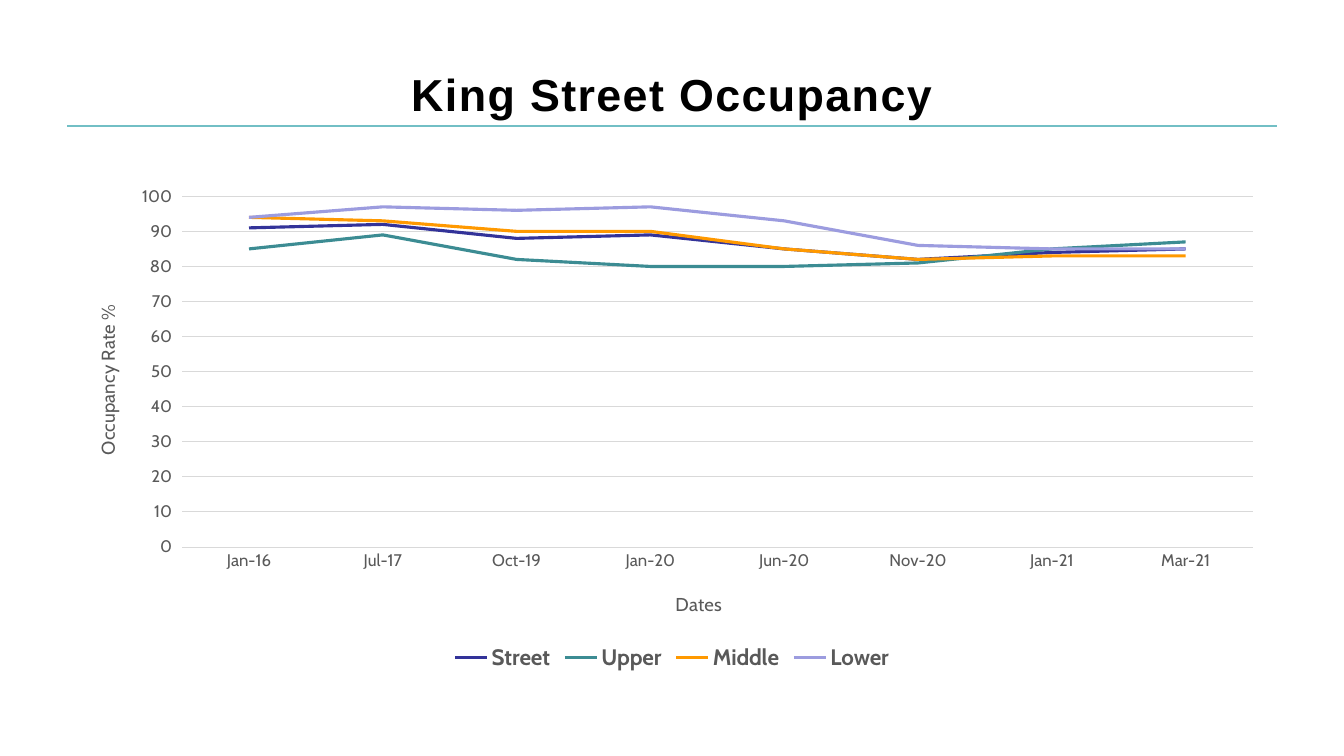
from lxml import etree
from pptx import Presentation, util as u
from pptx.chart.data import CategoryChartData
from pptx.dml.color import RGBColor
from pptx.enum import chart as ch, shapes, text
from pptx.oxml import parse_xml
from pptx.oxml.ns import nsdecls, qn

TITLE = "King Street Occupancy"
DATES = ["Jan-16", "Jul-17", "Oct-19", "Jan-20", "Jun-20", "Nov-20", "Jan-21", "Mar-21"]
SERIES = [
    ("Street", "333399", [91, 92, 88, 89, 85, 82, 84, 85]),
    ("Upper", "3C8C93", [85, 89, 82, 80, 80, 81, 85, 87]),
    ("Middle", "FF9900", [94, 93, 90, 90, 85, 82, 83, 83]),
    ("Lower", "9C9CDF", [94, 97, 96, 97, 93, 86, 85, 85]),
]
GREY, GRID, RULE = "595959", "D9D9D9", "72BFC5"
WIDTH, HEIGHT = 13.33, 7.5
MARGIN = WIDTH * 0.05
CONTENT = WIDTH - 2 * MARGIN
RULE_TOP, CHART_TOP, CHART_HEIGHT = HEIGHT / 6, 1.75, 4.95
# Shares of the chart's width and height
PLOT_AREA = {"x": 0.095, "y": 0.04, "w": 0.885, "h": 0.703}
DATES_TITLE = {"x": 0.5, "y": 0.825}
RATE_TITLE = {"x": 0.02, "y": 0.25}


def rgb(value):
    return RGBColor.from_string(value)


def style_font(font, size, color, name="Cabin", bold=False):
    font.size, font.name, font.bold = u.Pt(size), name, bold
    font.color.rgb = rgb(color)


def style_line(line, color, width):
    line.color.rgb = rgb(color)
    line.width = u.Pt(width)


def manual_layout(shares, inner=False):
    """Return a c:layout element with the given shares of the chart."""
    layout = parse_xml(f"<c:layout {nsdecls('c')}><c:manualLayout/></c:layout>")
    settings = {"layoutTarget": "inner"} if inner else {}
    settings.update({"xMode": "edge", "yMode": "edge"})
    settings.update(shares)
    for tag, value in settings.items():
        etree.SubElement(layout[0], qn(f"c:{tag}")).set("val", str(value))
    return layout


def add_axis_title(axis, label, shares):
    paragraph = axis.axis_title.text_frame.paragraphs[0]
    run = paragraph.add_run()
    run.text = label
    style_font(run.font, 13.3, GREY)
    title = axis.axis_title._element
    for old in title.findall(qn("c:layout")):
        title.remove(old)
    title.find(qn("c:tx")).addnext(manual_layout(shares))


def add_heading(slide):
    rule = slide.shapes.add_connector(
        shapes.MSO_CONNECTOR.STRAIGHT, u.Inches(MARGIN), u.Inches(RULE_TOP),
        u.Inches(MARGIN + CONTENT), u.Inches(RULE_TOP))
    style_line(rule.line, RULE, 1)
    etree.SubElement(rule._element.spPr, qn("a:effectLst"))

    box = slide.shapes.add_textbox(
        u.Inches(MARGIN), u.Inches(0.3), u.Inches(CONTENT), u.Inches(1.25))
    frame = box.text_frame
    frame.word_wrap = True
    frame.vertical_anchor = text.MSO_ANCHOR.MIDDLE
    paragraph = frame.paragraphs[0]
    paragraph.alignment = text.PP_ALIGN.CENTER
    run = paragraph.add_run()
    run.text = TITLE
    style_font(run.font, 32, "000000", "Arial", True)
    run.font._element.set("spc", "100")


def add_occupancy_chart(slide):
    data = CategoryChartData()
    data.categories = DATES
    for name, _, values in SERIES:
        data.add_series(name, values)
    chart = slide.shapes.add_chart(
        ch.XL_CHART_TYPE.LINE, u.Inches(MARGIN), u.Inches(CHART_TOP),
        u.Inches(CONTENT), u.Inches(CHART_HEIGHT), data).chart
    chart.has_title = False
    style_font(chart.font, 10, "000000")

    chart.has_legend = True
    chart.legend.position = ch.XL_LEGEND_POSITION.BOTTOM
    chart.legend.include_in_layout = False
    style_font(chart.legend.font, 16, GREY, bold=True)

    plot = chart.plots[0]
    plot.vary_by_categories = False
    for series, (_, color, _) in zip(plot.series, SERIES):
        series.smooth = False
        series.marker.style = ch.XL_MARKER_STYLE.NONE
        style_line(series.format.line, color, 2.25)

    dates, rate = chart.category_axis, chart.value_axis
    for axis in (dates, rate):
        style_font(axis.tick_labels.font, 12, GREY)
        axis.minor_tick_mark = ch.XL_TICK_MARK.NONE
    dates.major_tick_mark = ch.XL_TICK_MARK.NONE
    style_line(dates.format.line, GRID, 0.75)
    rate.major_tick_mark = ch.XL_TICK_MARK.OUTSIDE
    rate.minimum_scale, rate.maximum_scale, rate.major_unit = 0, 100, 10
    rate.format.line.fill.background()
    rate.has_major_gridlines = True
    style_line(rate.major_gridlines.format.line, GRID, 0.75)
    add_axis_title(dates, "Dates", DATES_TITLE)
    add_axis_title(rate, "Occupancy Rate %", RATE_TITLE)
    body = rate.axis_title.text_frame._txBody.bodyPr
    body.set("rot", "-5400000")
    body.set("vert", "horz")

    plot_area = chart._chartSpace.chart.plotArea
    for old in plot_area.findall(qn("c:layout")):
        plot_area.remove(old)
    plot_area.insert(0, manual_layout(PLOT_AREA, inner=True))


def main():
    presentation = Presentation()
    presentation.slide_width = u.Inches(WIDTH)
    presentation.slide_height = u.Inches(HEIGHT)
    slide = presentation.slides.add_slide(presentation.slide_layouts[6])
    add_heading(slide)
    add_occupancy_chart(slide)
    presentation.save("out.pptx")


if __name__ == "__main__":
    main()
